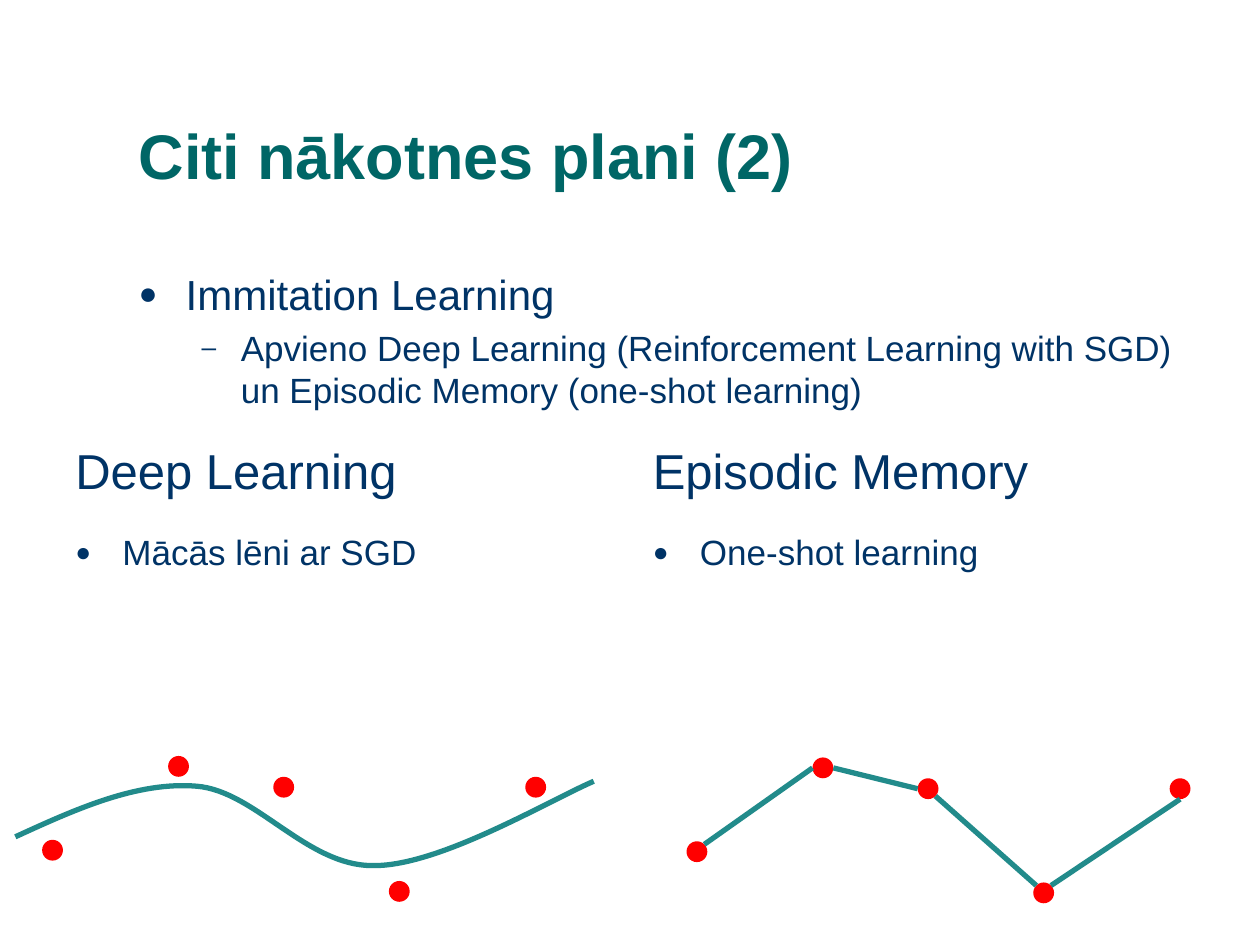
from dataclasses import dataclass
from itertools import pairwise
from math import cos, radians, sin

from lxml import etree
from pptx import Presentation
from pptx.dml.color import RGBColor
from pptx.enum.shapes import MSO_CONNECTOR, MSO_SHAPE
from pptx.enum.text import MSO_ANCHOR, MSO_AUTO_SIZE, PP_ALIGN
from pptx.oxml.ns import qn
from pptx.util import Cm, Pt

STRAIGHT = MSO_CONNECTOR.STRAIGHT
OVAL = MSO_SHAPE.OVAL
LEFT = PP_ALIGN.LEFT
TOP, BOTTOM = MSO_ANCHOR.TOP, MSO_ANCHOR.BOTTOM
NO_AUTOFIT = MSO_AUTO_SIZE.NONE


@dataclass(frozen=True)
class Theme:
    """Colours, font and type sizes of the slide."""
    font: str = "Arial"
    heading: str = "006666"
    ink: str = "003366"
    sample: str = "FF0000"
    curve: str = "228B8B"
    title_size: int = 36
    header_size: int = 28
    topic_size: int = 24
    detail_size: int = 20
    curve_width: int = 3


@dataclass(frozen=True)
class Box:
    """A region in centimetres."""
    left: float
    top: float
    width: float
    height: float

    def emu(self):
        """Return the region as slide lengths."""
        return [Cm(v) for v in (self.left, self.top, self.width, self.height)]


THEME = Theme()
DOT = 0.42
SAMPLES = [(0, 1.69), (2.54, 0), (4.66, 0.42), (6.99, 2.52), (9.74, 0.42)]
JOIN_ANGLES = [(45, 180), (0, 180), (-45, 135), (45, -90)]
SMOOTH_FIT = [(-0.54, 1.63), (0.68, 1.07), (1.92, 0.51), (3.12, 0.61),
              (4.31, 0.71), (5.35, 2.24), (6.7, 2.21), (8.02, 2.21),
              (10.2, 0.91), (11.12, 0.51)]


def rgb(value):
    """Turn a hex string into a colour."""
    return RGBColor.from_string(value)


def prepare_frame(owner, box, anchor=TOP):
    """Place a text holder and return its wrapped text frame."""
    owner.left, owner.top, owner.width, owner.height = box.emu()
    frame = owner.text_frame
    frame.word_wrap = True
    frame.auto_size = NO_AUTOFIT
    frame.vertical_anchor = anchor
    return frame


def write(paragraph, text, size, color=THEME.ink, bold=False, spacing=0.9, before=0.2):
    """Fill a paragraph with one formatted run."""
    paragraph.alignment = LEFT
    paragraph.line_spacing = spacing
    paragraph.space_before = Pt(size * before)
    run = paragraph.add_run()
    run.text = text
    run.font.name = THEME.font
    run.font.size = Pt(size)
    run.font.bold = bold
    run.font.color.rgb = rgb(color)


def add_bullet(paragraph, char="●", margin=0.95, hanging=0.95):
    """Give a paragraph a hanging bullet."""
    props = paragraph._p.get_or_add_pPr()
    props.set("marL", str(Cm(margin)))
    props.set("indent", str(-Cm(hanging)))
    color = etree.SubElement(props, qn("a:buClr"))
    etree.SubElement(color, qn("a:srgbClr"), val=THEME.ink)
    etree.SubElement(props, qn("a:buSzPct"), val="75000")
    etree.SubElement(props, qn("a:buFont"), typeface=THEME.font)
    etree.SubElement(props, qn("a:buChar"), char=char)


def add_title(slide, box, text):
    """Fill the title placeholder."""
    frame = prepare_frame(slide.shapes.title, box, BOTTOM)
    write(frame.paragraphs[0], text, THEME.title_size, THEME.heading, bold=True, before=0)


def add_plan(slide, box, topic, detail):
    """Fill the body placeholder with a topic and its detail."""
    frame = prepare_frame(slide.placeholders[1], box)
    topic_line = frame.paragraphs[0]
    write(topic_line, topic, THEME.topic_size, spacing=1.0)
    add_bullet(topic_line)
    detail_line = frame.add_paragraph()
    detail_line.level = 1
    write(detail_line, detail, THEME.detail_size, spacing=1.0)
    add_bullet(detail_line, "–", 2.06, 0.79)


def add_column(slide, box, header, point, header_height=1.78):
    """Add a column header with a bulleted point below it."""
    header_box = Box(box.left, box.top, box.width, header_height)
    point_box = Box(box.left, box.top + header_height, box.width, box.height - header_height)
    for part, text, size in ((header_box, header, THEME.header_size),
                             (point_box, point, THEME.detail_size)):
        frame = prepare_frame(slide.shapes.add_textbox(*part.emu()), part)
        write(frame.paragraphs[0], text, size)
    add_bullet(frame.paragraphs[0])


def add_samples(slide, box):
    """Add the sample dots inside a plot region."""
    for x, y in SAMPLES:
        dot = slide.shapes.add_shape(OVAL, *Box(box.left + x, box.top + y, DOT, DOT).emu())
        dot.shadow.inherit = False
        dot.fill.solid()
        dot.fill.fore_color.rgb = rgb(THEME.sample)
        dot.line.fill.background()


def style_curve(line):
    """Apply the curve colour and width."""
    line.color.rgb = rgb(THEME.curve)
    line.width = Pt(THEME.curve_width)


def add_smooth_plot(slide, box):
    """Add samples with a smooth Bezier fit between them."""
    add_samples(slide, box)
    points = [(Cm(box.left + x), Cm(box.top + y)) for x, y in SMOOTH_FIT]
    builder = slide.shapes.build_freeform(*points[0])
    builder.add_line_segments(points[1:], close=False)
    fit = builder.convert_to_shape()
    fit.shadow.inherit = False
    fit.fill.background()
    style_curve(fit.line)
    segments = list(fit._element.iter(qn("a:lnTo")))
    for start in range(0, len(segments), 3):
        bezier = etree.Element(qn("a:cubicBezTo"))
        segments[start].addprevious(bezier)
        for segment in segments[start:start + 3]:
            bezier.append(segment[0])
            segment.getparent().remove(segment)


def rim_point(box, sample, angle):
    """Return the point on a sample's rim at an angle in degrees."""
    x, y = sample
    radius = DOT / 2
    return (Cm(box.left + x + radius + radius * cos(radians(angle))),
            Cm(box.top + y + radius - radius * sin(radians(angle))))


def add_exact_plot(slide, box):
    """Add samples joined one to the next by straight lines."""
    add_samples(slide, box)
    for (begin, end), (leave, arrive) in zip(pairwise(SAMPLES), JOIN_ANGLES):
        link = slide.shapes.add_connector(
            STRAIGHT, *rim_point(box, begin, leave), *rim_point(box, end, arrive))
        style_curve(link.line)
        etree.SubElement(link._element.spPr, qn("a:effectLst"))


def main():
    """Build and save the slide."""
    deck = Presentation()
    deck.slide_width, deck.slide_height = Cm(25.4), Cm(19.05)
    slide = deck.slides.add_slide(deck.slide_layouts[1])
    add_title(slide, Box(2.54, 0.85, 22.23, 3.18), "Citi nākotnes plani (2)")
    add_plan(slide, Box(2.54, 5.29, 22.23, 10.37), "Immitation Learning",
             "Apvieno Deep Learning (Reinforcement Learning with SGD) "
             "un Episodic Memory (one-shot learning)")
    add_column(slide, Box(1.27, 8.89, 11.22, 12.75), "Deep Learning", "Mācās lēni ar SGD")
    add_column(slide, Box(12.91, 8.89, 11.22, 12.75), "Episodic Memory", "One-shot learning")
    add_smooth_plot(slide, Box(0.85, 15.24, 10.16, 2.94))
    add_exact_plot(slide, Box(13.84, 15.27, 10.16, 2.94))
    deck.save("out.pptx")


if __name__ == "__main__":
    main()
